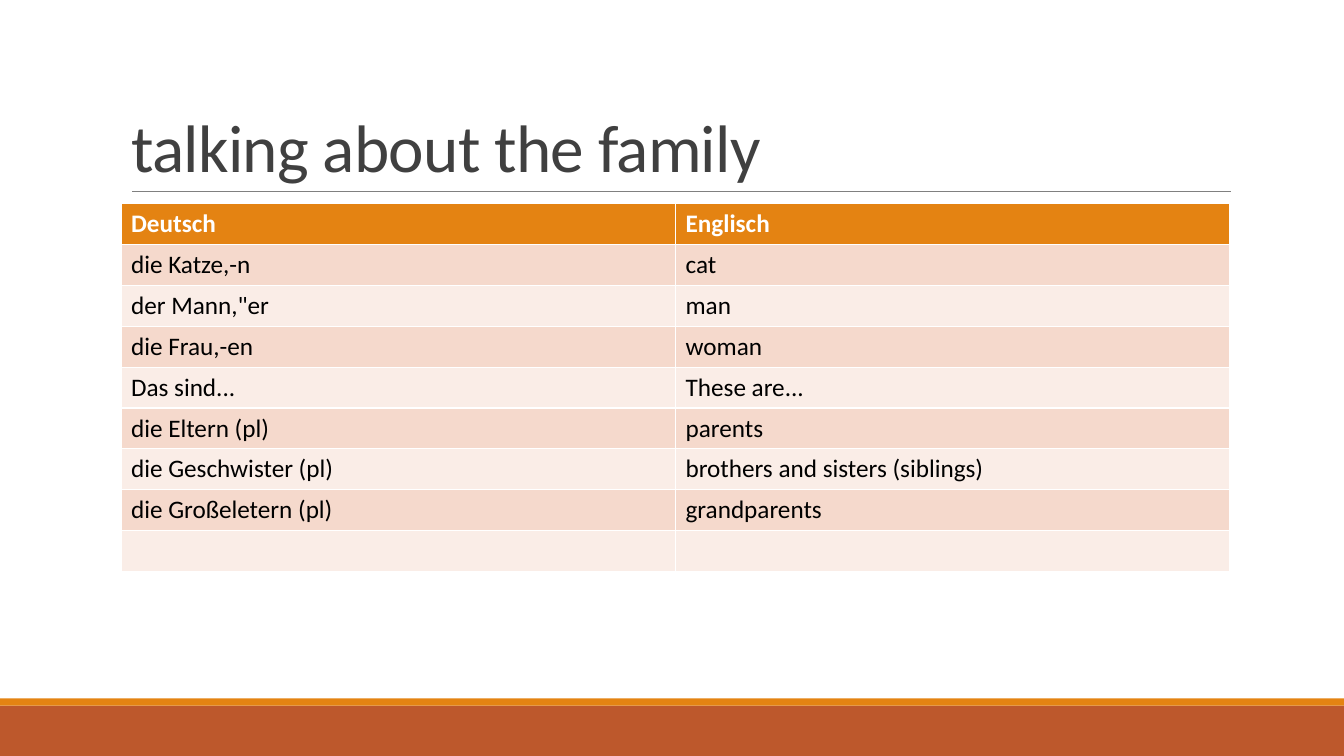
from pptx import Presentation
from pptx.dml.color import RGBColor
from pptx.enum import shapes as sh, text as tx
from pptx.oxml import parse_xml
from pptx.oxml.ns import nsdecls
from pptx.util import Inches, Pt

WORDS = [
    ("Deutsch", "Englisch"),
    ("die Katze,-n", "cat"),
    ('der Mann,"er', "man"),
    ("die Frau,-en", "woman"),
    ("Das sind...", "These are..."),
    ("die Eltern (pl)", "parents"),
    ("die Geschwister (pl)", "brothers and sisters (siblings)"),
    ("die Großeletern (pl)", "grandparents"),
    ("", ""),
]


def color(code):
    return RGBColor.from_string(code)


def assign(item, values):
    """Set each attribute of item named in values."""
    for name, value in values.items():
        setattr(item, name, value)


class Page:
    face = "Calibri"
    head = "E48312"
    base = "BD582C"
    bands = ("FAEDE7", "F5D9CC")

    def __init__(self, deck):
        self.slide = deck.slides.add_slide(deck.slide_layouts[5])
        self.shapes = self.slide.shapes

    def label(self, para, words, size, tint, bold=False):
        """Add a styled run to a paragraph."""
        run = para.add_run()
        run.text = words
        assign(run.font, {"name": self.face, "size": Pt(size), "bold": bold})
        run.font.color.rgb = color(tint)
        return run

    def title(self, words, left, top, width, height):
        box = self.shapes.title
        assign(box, {"left": Inches(left), "top": Inches(top),
                     "width": Inches(width), "height": Inches(height)})
        frame = box.text_frame
        assign(frame, {"vertical_anchor": tx.MSO_ANCHOR.BOTTOM,
                       "word_wrap": True, "auto_size": tx.MSO_AUTO_SIZE.NONE})
        para = frame.paragraphs[0]
        assign(para, {"alignment": tx.PP_ALIGN.LEFT, "line_spacing": 0.85})
        run = self.label(para, words, 48, "404040")
        run.font._element.set("spc", "-50")

    def bar(self, top, height, fill):
        box = self.shapes.add_shape(sh.MSO_SHAPE.RECTANGLE, 0, Inches(top),
                                    Inches(13.33), Inches(height))
        box.shadow.inherit = False
        box.fill.solid()
        box.fill.fore_color.rgb = color(fill)
        box.line.fill.background()

    def rule(self, left, right, top):
        line = self.shapes.add_connector(
            sh.MSO_CONNECTOR.STRAIGHT, Inches(left), Inches(top),
            Inches(right), Inches(top))
        line.line.width = Pt(0.5)
        line.line.color.rgb = color("808080")
        line._element.spPr.append(parse_xml(f"<a:effectLst {nsdecls('a')}/>"))

    def table(self, rows, left, top, width, height):
        """Add a table with a bold header and banded rows."""
        grid = self.shapes.add_table(
            len(rows), len(rows[0]), Inches(left), Inches(top),
            Inches(width), Inches(height)).table
        for r, row in enumerate(rows):
            fill = self.bands[r % 2] if r else self.head
            tint = "000000" if r else "FFFFFF"
            for c, words in enumerate(row):
                cell = grid.cell(r, c)
                cell.fill.solid()
                cell.fill.fore_color.rgb = color(fill)
                if words:
                    self.label(cell.text_frame.paragraphs[0], words, 18,
                               tint, bold=r == 0)


def main():
    deck = Presentation()
    assign(deck, {"slide_width": Inches(13.33), "slide_height": Inches(7.5)})
    page = Page(deck)
    page.bar(7, 0.5, page.base)
    page.bar(6.93, 0.07, page.head)
    page.rule(1.31, 12.21, 1.9)
    page.title("talking about the family", 1.2, 0.31, 11, 1.59)
    page.table(WORDS, 1.2, 2.02, 11, 3.65)
    deck.save("out.pptx")


if __name__ == "__main__":
    main()
